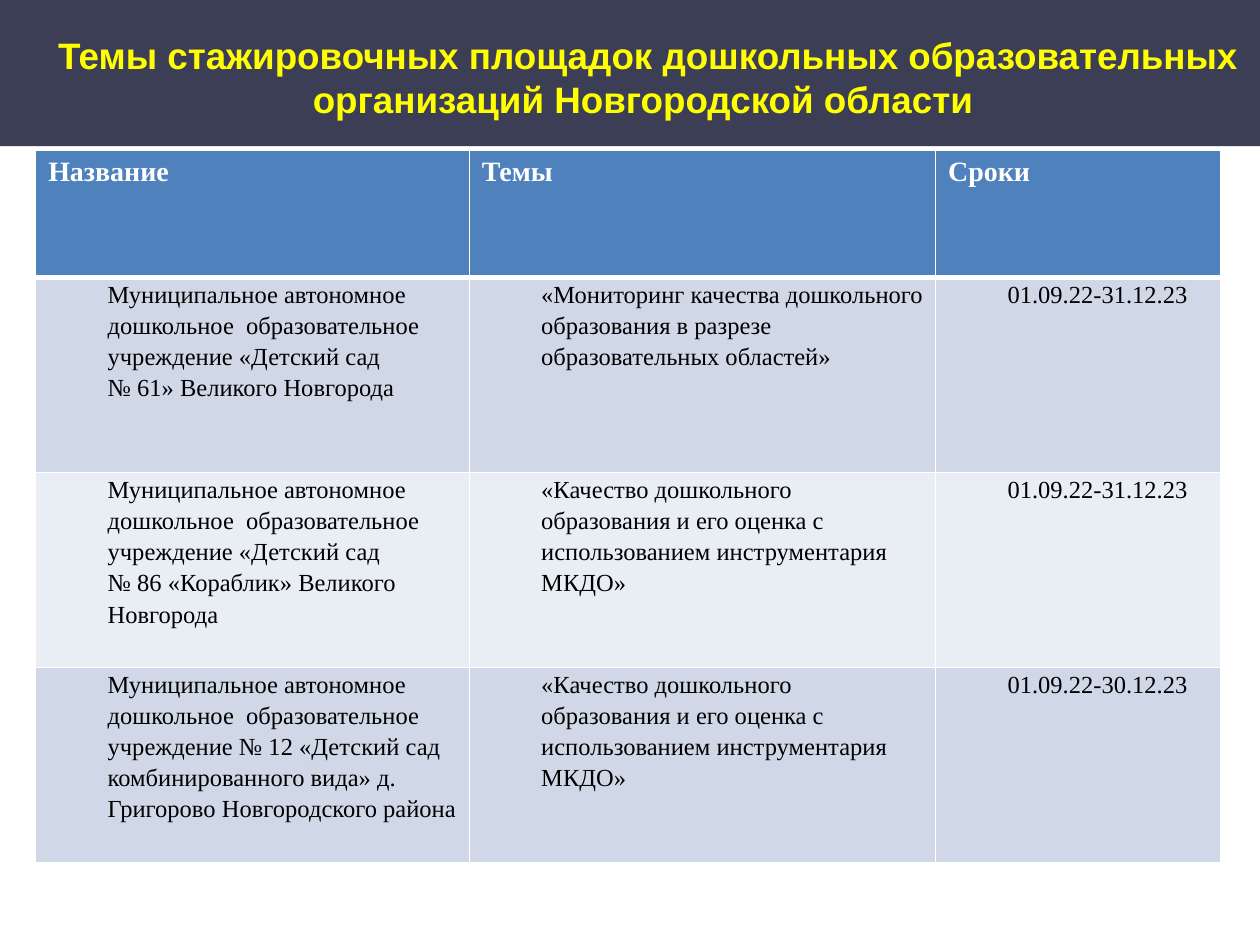
from lxml.etree import SubElement
from pptx import Presentation
from pptx.dml.color import RGBColor
from pptx.enum.shapes import MSO_SHAPE
from pptx.enum.text import PP_ALIGN
from pptx.oxml.ns import qn
from pptx.util import Cm, Pt

NAVY = RGBColor(0x3B, 0x3E, 0x54)
YELLOW = RGBColor(0xFF, 0xFF, 0x00)
BLUE = RGBColor(0x4F, 0x81, 0xBD)
BAND_DARK = RGBColor(0xD0, 0xD8, 0xE8)
BAND_LIGHT = RGBColor(0xE9, 0xED, 0xF4)
WHITE = RGBColor(0xFF, 0xFF, 0xFF)
BLACK = RGBColor(0x00, 0x00, 0x00)

TITLE = "Темы стажировочных площадок дошкольных образовательных организаций Новгородской области "
KIND = "Муниципальное автономное"
GARDEN = "дошкольное  образовательное учреждение «Детский сад"
QUALITY = "«Качество дошкольного образования и его оценка с использованием инструментария МКДО»"
ROWS = [
    [["Название"], ["Темы"], ["Сроки"]],
    [[KIND, GARDEN, "№ 61» Великого Новгорода"],
     ["«Мониторинг качества дошкольного образования в разрезе образовательных областей»"],
     ["01.09.22-31.12.23"]],
    [[KIND, GARDEN, "№ 86 «Кораблик» Великого Новгорода"],
     [QUALITY],
     ["01.09.22-31.12.23"]],
    [[KIND, "дошкольное  образовательное учреждение № 12 «Детский сад комбинированного вида» "
            "д. Григорово Новгородского района"],
     [QUALITY],
     ["01.09.22-30.12.23"]],
]
COL_WIDTHS = [8.74, 9.4, 5.75]
ROW_HEIGHTS = [2.57, 3.93, 3.93, 3.93]


def add_run(p, text, font, size, color, bold):
    r = p.add_run()
    r.text = text
    r.font.name = font
    r.font.size = Pt(size)
    r.font.bold = bold
    r.font.color.rgb = color


def add_borders(cell, widths):
    tcPr = cell._tc.get_or_add_tcPr()
    for side, width in widths.items():
        ln = SubElement(tcPr, qn(f"a:ln{side}"), w=str(Pt(width)))
        fill = SubElement(ln, qn("a:solidFill"))
        SubElement(fill, qn("a:srgbClr"), val=str(WHITE))


prs = Presentation()
prs.slide_width = Cm(25.4)
prs.slide_height = Cm(19.05)
s = prs.slides.add_slide(prs.slide_layouts[6])

sp = s.shapes.add_shape(MSO_SHAPE.RECTANGLE, 0, 0, prs.slide_width, Cm(2.95))
sp.shadow.inherit = False
sp.fill.solid()
sp.fill.fore_color.rgb = NAVY
sp.line.fill.background()

tf = s.shapes.add_textbox(Cm(1.09), Cm(0.66), Cm(23.95), Cm(1.8)).text_frame
tf.word_wrap = True
tf.margin_left = tf.margin_top = tf.margin_right = tf.margin_bottom = 0
p = tf.paragraphs[0]
p.alignment = PP_ALIGN.CENTER
add_run(p, TITLE, "Arial", 21, YELLOW, True)

table = s.shapes.add_table(len(ROWS), len(COL_WIDTHS), Cm(0.72), Cm(3.03),
                           Cm(sum(COL_WIDTHS)), Cm(sum(ROW_HEIGHTS))).table
for col, width in zip(table.columns, COL_WIDTHS):
    col.width = Cm(width)
for row, height in zip(table.rows, ROW_HEIGHTS):
    row.height = Cm(height)

for i, row in enumerate(ROWS):
    header = i == 0
    for j, lines in enumerate(row):
        cell = table.cell(i, j)
        add_borders(cell, {"L": 1, "R": 1, "T": 3 if i == 1 else 1, "B": 3 if header else 1})
        cell.fill.solid()
        cell.fill.fore_color.rgb = BLUE if header else BAND_DARK if i % 2 else BAND_LIGHT
        if not header:
            cell.margin_left = cell.margin_right = Cm(0.18)
            cell.margin_top = cell.margin_bottom = 0
        tf = cell.text_frame
        for k, line in enumerate(lines):
            p = tf.add_paragraph() if k else tf.paragraphs[0]
            if header:
                add_run(p, line, "Times New Roman", 16, WHITE, True)
            else:
                p.line_spacing = 1.15
                p._p.get_or_add_pPr().set("marL", str(Cm(1.27)))
                add_run(p, line, "Times New Roman", 14, BLACK, False)

prs.save("out.pptx")
